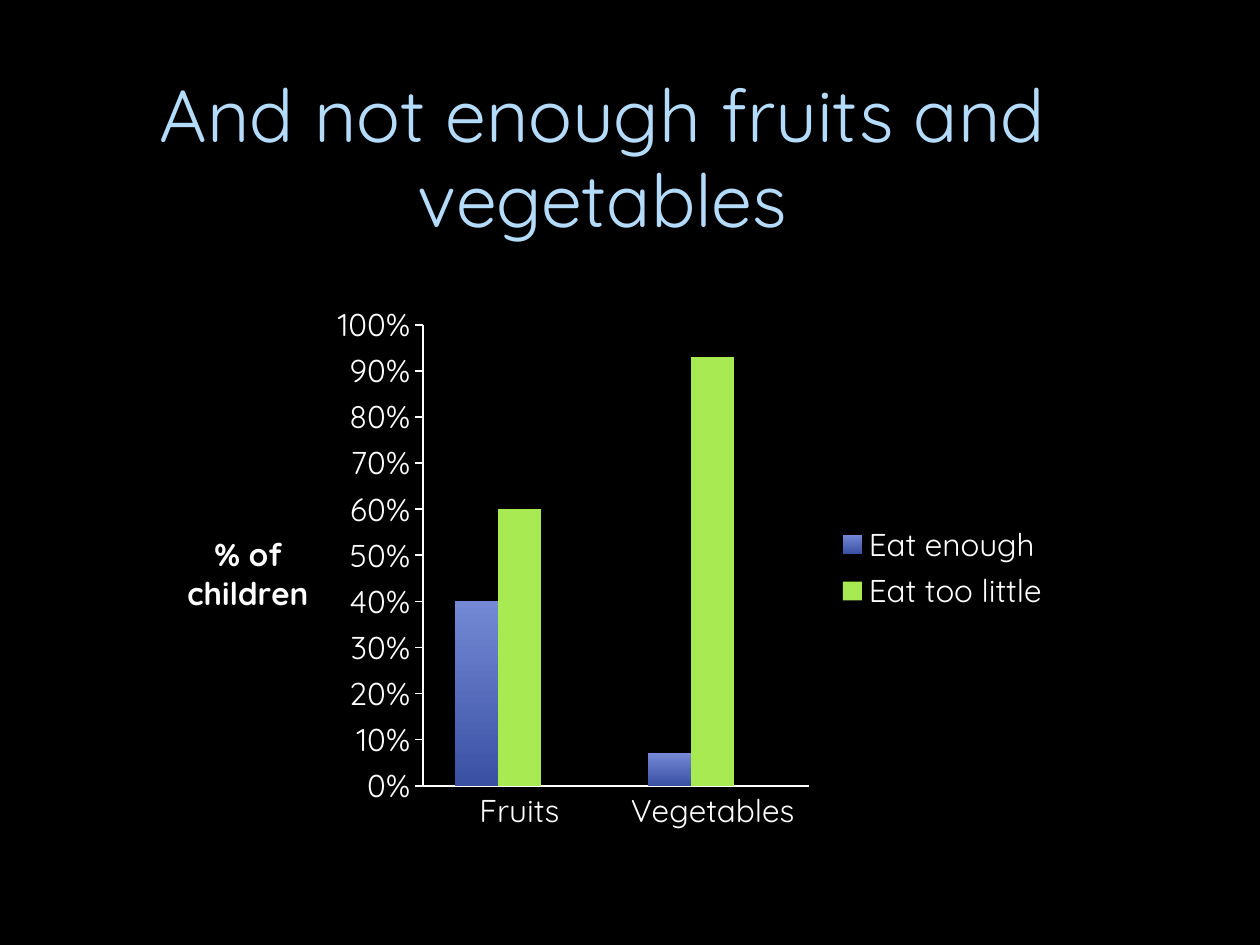
from lxml import etree
from pptx import Presentation
from pptx import util as u
from pptx.chart import data
from pptx.dml.color import RGBColor
from pptx.enum import chart as ch, text
from pptx.oxml import ns

COLORS = {"bg": "000000", "title": "B4DCFA", "text": "FFFFFF",
          "blue_top": "7389D5", "blue_bottom": "3A50A3", "green": "A7EA52"}


def rgb(name):
    return RGBColor.from_string(COLORS[name])


def set_layout(before, x, y, w=None, h=None, inner=False):
    parent = before.getparent()
    for old in parent.findall(ns.qn("c:layout")):
        parent.remove(old)
    layout = etree.Element(ns.qn("c:layout"))
    manual = etree.SubElement(layout, ns.qn("c:manualLayout"))
    values = {"layoutTarget": "inner" if inner else None,
              "xMode": "edge", "yMode": "edge", "x": x, "y": y, "w": w, "h": h}
    for tag, value in values.items():
        if value is not None:
            etree.SubElement(manual, ns.qn(f"c:{tag}")).set("val", str(value))
    before.addprevious(layout)


class Deck:
    font = "Quicksand"

    def __init__(self, prs):
        self.s = prs.slides.add_slide(prs.slide_layouts[6])
        fill = self.s.background.fill
        fill.solid()
        fill.fore_color.rgb = rgb("bg")

    def style(self, font, color, **formats):
        for key, value in {"name": self.font, **formats}.items():
            setattr(font, key, value)
        font.color.rgb = rgb(color)

    def title(self, words, x, y, w, h):
        sp = self.s.shapes.add_textbox(*map(u.Inches, (x, y, w, h)))
        tf = sp.text_frame
        tf.word_wrap = True
        tf.vertical_anchor = text.MSO_ANCHOR.MIDDLE
        p = tf.paragraphs[0]
        p.alignment = text.PP_ALIGN.CENTER
        p.line_spacing = 0.97
        r = p.add_run()
        r.text = words
        self.style(r.font, "title", size=u.Pt(42))

    def column_chart(self, cats, series, axis_title, x, y, w, h):
        cd = data.CategoryChartData(number_format="0%")
        cd.categories = cats
        for name, values in series:
            cd.add_series(name, values)
        frame = self.s.shapes.add_chart(
            ch.XL_CHART_TYPE.COLUMN_CLUSTERED, *map(u.Inches, (x, y, w, h)), cd)
        chart = frame.chart
        chart.has_title = False
        self.style(chart.font, "text", size=u.Pt(18))
        plot = chart.plots[0]
        for key, value in {"gap_width": 150, "overlap": 0, "vary_by_categories": False}.items():
            setattr(plot, key, value)
        self.fill_series(plot)
        set_layout(plot._element.getparent()[0] if plot._element.getparent()[0].tag != ns.qn("c:layout")
                   else plot._element, 0.3, 0.056, 0.372, 0.824, inner=True)
        self.axes(chart, axis_title)
        self.legend(chart)

    def fill_series(self, plot):
        for i, ser in enumerate(plot.series):
            fill = ser.format.fill
            if i == 0:
                fill.gradient()
                fill.gradient_angle = 270
                for stop, name in zip(fill.gradient_stops, ("blue_top", "blue_bottom")):
                    stop.color.rgb = rgb(name)
            else:
                fill.solid()
                fill.fore_color.rgb = rgb("green")

    def axes(self, chart, axis_title):
        ticks = ch.XL_TICK_MARK
        for axis, mark in ((chart.category_axis, ticks.NONE), (chart.value_axis, ticks.OUTSIDE)):
            formats = {"major_tick_mark": mark, "minor_tick_mark": ticks.NONE,
                       "has_major_gridlines": False}
            for key, value in formats.items():
                setattr(axis, key, value)
            axis.format.line.color.rgb = rgb("text")
            axis.format.line.width = u.Pt(1)
            self.style(axis.tick_labels.font, "text", size=u.Pt(18))
        axis = chart.value_axis
        for key, value in {"minimum_scale": 0, "maximum_scale": 1, "major_unit": 0.1}.items():
            setattr(axis, key, value)
        axis.tick_labels.number_format = "0%"
        axis.tick_labels.number_format_is_linked = False
        tf = axis.axis_title.text_frame
        for i, line in enumerate(axis_title):
            p = tf.add_paragraph() if i else tf.paragraphs[0]
            r = p.add_run()
            r.text = line
            self.style(r.font, "text", size=u.Pt(18), bold=True)
        body = tf._txBody.find(ns.qn("a:bodyPr"))
        body.set("rot", "0")
        body.set("vert", "horz")
        set_layout(axis.axis_title._element.find(ns.qn("c:overlay")), 0.07, 0.42)

    def legend(self, chart):
        chart.has_legend = True
        legend = chart.legend
        legend.position = ch.XL_LEGEND_POSITION.RIGHT
        legend.include_in_layout = False
        self.style(legend.font, "text", size=u.Pt(18))
        overlay = legend._element.find(ns.qn("c:overlay"))
        entry = etree.Element(ns.qn("c:legendEntry"))
        for tag, value in (("idx", "2"), ("delete", "1")):
            etree.SubElement(entry, ns.qn(f"c:{tag}")).set("val", value)
        overlay.addprevious(entry)
        set_layout(overlay, 0.69, 0.4, 0.22, 0.18)


def main():
    prs = Presentation()
    prs.slide_width, prs.slide_height = u.Inches(10), u.Inches(7.5)
    deck = Deck(prs)
    deck.title("And not enough fruits and vegetables", 0.42, 0.5, 8.72, 1.53)
    deck.column_chart(
        ["Fruits", "Vegetables"],
        [("Eat enough", (0.4, 0.07)),
         ("Eat too little", (0.6, 0.93)),
         ("Series 3", (None, None))],
        ["% of", "children"], 0.88, 2.33, 8.25, 4.44)
    prs.save("out.pptx")


if __name__ == "__main__":
    main()
